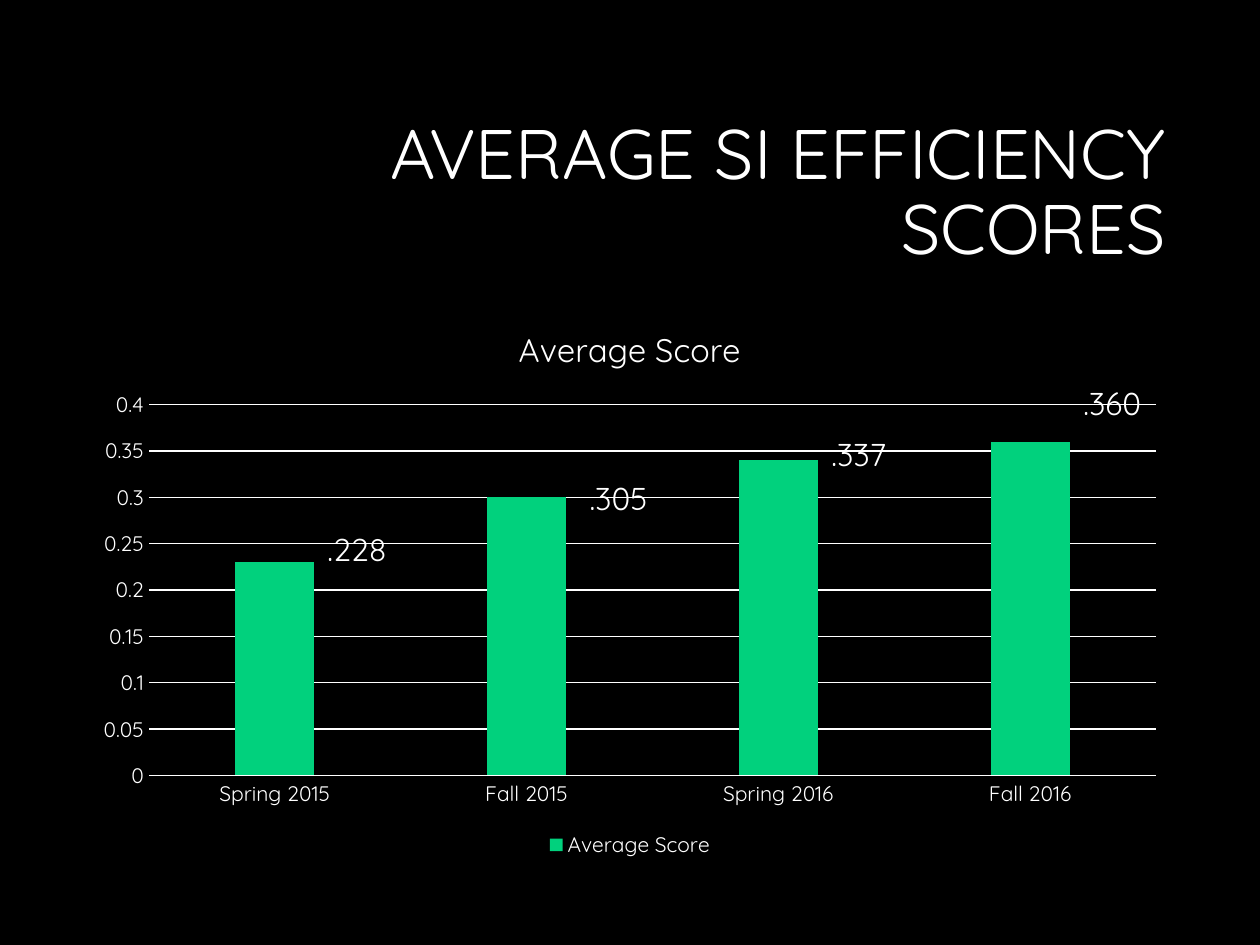
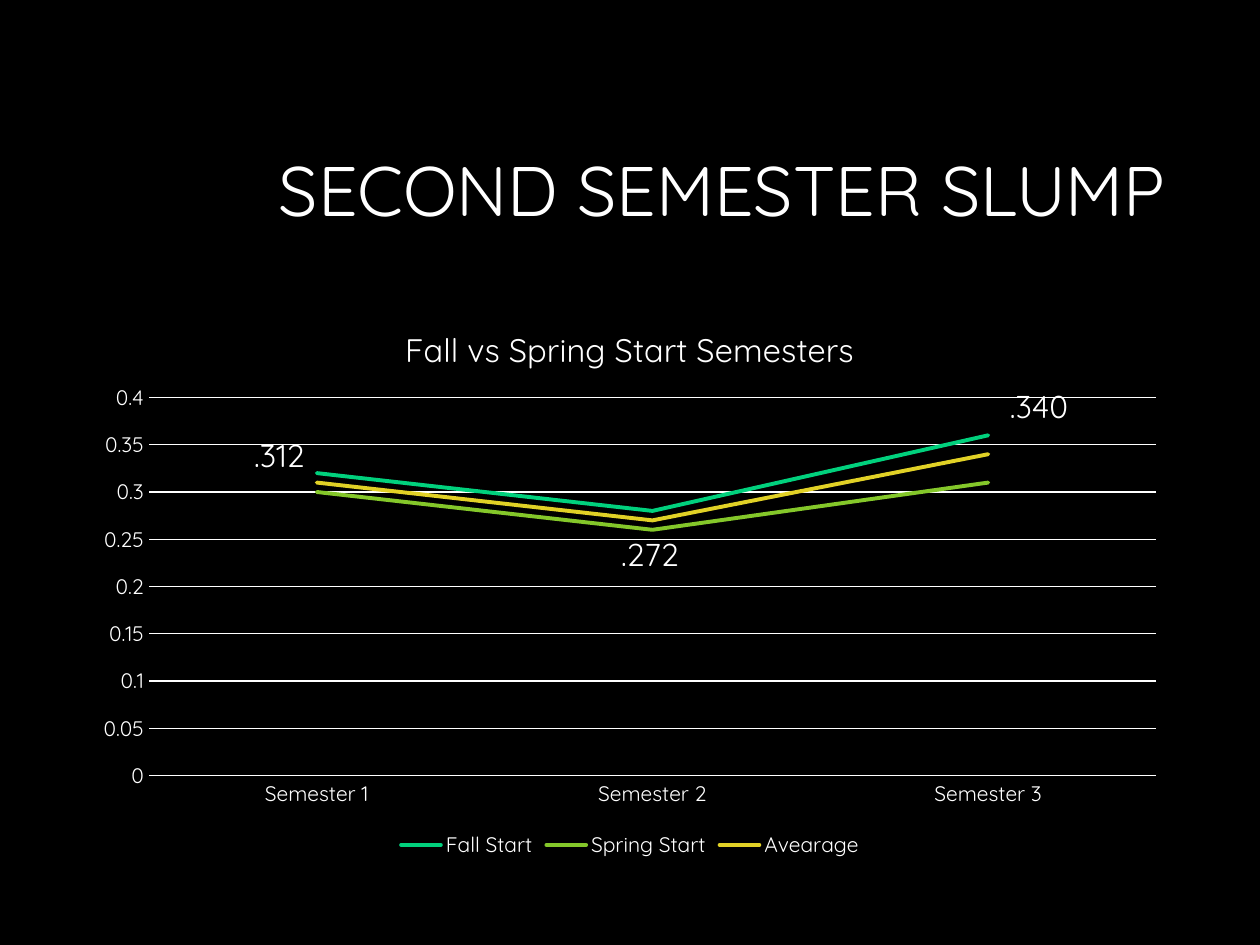
from lxml.etree import SubElement
from pptx import Presentation
from pptx.chart.data import CategoryChartData
from pptx.dml.color import RGBColor
from pptx.enum.chart import XL_CHART_TYPE, XL_LEGEND_POSITION, XL_TICK_MARK
from pptx.enum.text import MSO_ANCHOR, MSO_AUTO_SIZE, PP_ALIGN
from pptx.oxml.ns import qn
from pptx.util import Pt

BLACK = RGBColor(0x00, 0x00, 0x00)
WHITE = RGBColor(0xFF, 0xFF, 0xFF)
GREEN = RGBColor(0x01, 0xD1, 0x7D)
LIME = RGBColor(0x84, 0xC7, 0x2A)
YELLOW = RGBColor(0xE1, 0xD1, 0x26)
SERIES_COLORS = [GREEN, LIME, YELLOW]
TITLE_RIGHT = 673.2
CHART_WIDTH, CHART_HEIGHT = 626.4, 320.4
PLOT_LEFT, PLOT_RIGHT, PLOT_BOTTOM = 38.3, 613.9, 270.4


def style_font(font, size):
    font.name = "Quicksand"
    font.size = Pt(size)
    font.bold = False
    font.color.rgb = WHITE


def place_plot(chart, top):
    plot_area = chart._chartSpace.chart.plotArea
    layout = plot_area.find(qn("c:layout"))
    if layout is None:
        layout = SubElement(plot_area, qn("c:layout"))
        plot_area.insert(0, layout)
    manual = SubElement(layout, qn("c:manualLayout"))
    settings = [("layoutTarget", "inner"), ("xMode", "edge"), ("yMode", "edge"),
                ("x", PLOT_LEFT / CHART_WIDTH), ("y", top / CHART_HEIGHT),
                ("w", (PLOT_RIGHT - PLOT_LEFT) / CHART_WIDTH),
                ("h", (PLOT_BOTTOM - top) / CHART_HEIGHT)]
    for tag, value in settings:
        SubElement(manual, qn(f"c:{tag}")).set("val", str(value))


slides = [
    {
        "title": "AVERAGE SI EFFICIENCY SCORES",
        "title_left": 171.4,
        "kind": XL_CHART_TYPE.COLUMN_CLUSTERED,
        "chart_title": "Average Score",
        "plot_top": 58.4,
        "categories": ["Spring 2015", "Fall 2015", "Spring 2016", "Fall 2016"],
        "series": {"Average Score": [0.23, 0.3, 0.34, 0.36]},
        "scores": [(".360", 612, 216), (".337", 468, 244.8),
                   (".305", 329.8, 270), (".228", 180, 299.2)],
    },
    {
        "title": "SECOND SEMESTER SLUMP",
        "title_left": 54,
        "kind": XL_CHART_TYPE.LINE,
        "chart_title": "Fall vs Spring Start Semesters",
        "plot_top": 54.4,
        "categories": ["Semester 1", "Semester 2", "Semester 3"],
        "series": {
            "Fall Start": [0.32, 0.28, 0.36],
            "Spring Start": [0.3, 0.26, 0.31],
            "Avearage": [0.31, 0.27, 0.34],
        },
        "scores": [(".312", 138.2, 245.5), (".272", 347.8, 302.4),
                   (".340", 570, 217.4)],
    },
]

prs = Presentation()
prs.slide_width = Pt(720)
prs.slide_height = Pt(540)
background = prs.slide_master.background.fill
background.solid()
background.fore_color.rgb = BLACK

for content in slides:
    slide = prs.slides.add_slide(prs.slide_layouts[5])

    title = slide.shapes.title
    title.left, title.top = Pt(content["title_left"]), Pt(60.3)
    title.width, title.height = Pt(TITLE_RIGHT - content["title_left"]), Pt(101.5)
    title.text_frame.text = content["title"]
    title.text_frame.auto_size = MSO_AUTO_SIZE.NONE
    title.text_frame.vertical_anchor = MSO_ANCHOR.MIDDLE
    heading = title.text_frame.paragraphs[0]
    heading.alignment = PP_ALIGN.RIGHT
    heading.line_spacing = 0.9
    style_font(heading.font, 40)

    data = CategoryChartData(number_format="General")
    data.categories = content["categories"]
    for name, values in content["series"].items():
        data.add_series(name, values)
    chart = slide.shapes.add_chart(
        content["kind"], Pt(46.8), Pt(172.8),
        Pt(CHART_WIDTH), Pt(CHART_HEIGHT), data).chart
    style_font(chart.font, 10)

    chart.has_title = True
    chart.chart_title.include_in_layout = False
    chart.chart_title.text_frame.text = content["chart_title"]
    style_font(chart.chart_title.text_frame.paragraphs[0].font, 18.6)

    chart.has_legend = True
    chart.legend.position = XL_LEGEND_POSITION.BOTTOM
    chart.legend.include_in_layout = False
    style_font(chart.legend.font, 12)

    for axis in (chart.category_axis, chart.value_axis):
        axis.major_tick_mark = XL_TICK_MARK.NONE
        axis.minor_tick_mark = XL_TICK_MARK.NONE
        style_font(axis.tick_labels.font, 12)
    chart.value_axis.minimum_scale = 0
    chart.value_axis.maximum_scale = 0.4
    chart.value_axis.major_unit = 0.05
    chart.value_axis.has_major_gridlines = True
    chart.value_axis.format.line.fill.background()
    for rule in (chart.category_axis.format.line,
                 chart.value_axis.major_gridlines.format.line):
        rule.color.rgb = WHITE
        rule.width = Pt(0.75)

    plot = chart.plots[0]
    plot.vary_by_categories = False
    for series, color in zip(plot.series, SERIES_COLORS):
        if content["kind"] == XL_CHART_TYPE.LINE:
            series.smooth = False
            series.format.line.color.rgb = color
            series.format.line.width = Pt(2.25)
            series._element.find(f".//{qn('a:ln')}").set("cap", "rnd")
        else:
            plot.gap_width = 219
            plot.overlap = -27
            series.format.fill.solid()
            series.format.fill.fore_color.rgb = color
    place_plot(chart, content["plot_top"])

    for score, left, top in content["scores"]:
        frame = slide.shapes.add_textbox(Pt(left), Pt(top), Pt(49.7), Pt(28.8)).text_frame
        frame.word_wrap = False
        frame.auto_size = MSO_AUTO_SIZE.SHAPE_TO_FIT_TEXT
        frame.text = score
        style_font(frame.paragraphs[0].font, 18)

prs.save("out.pptx")
